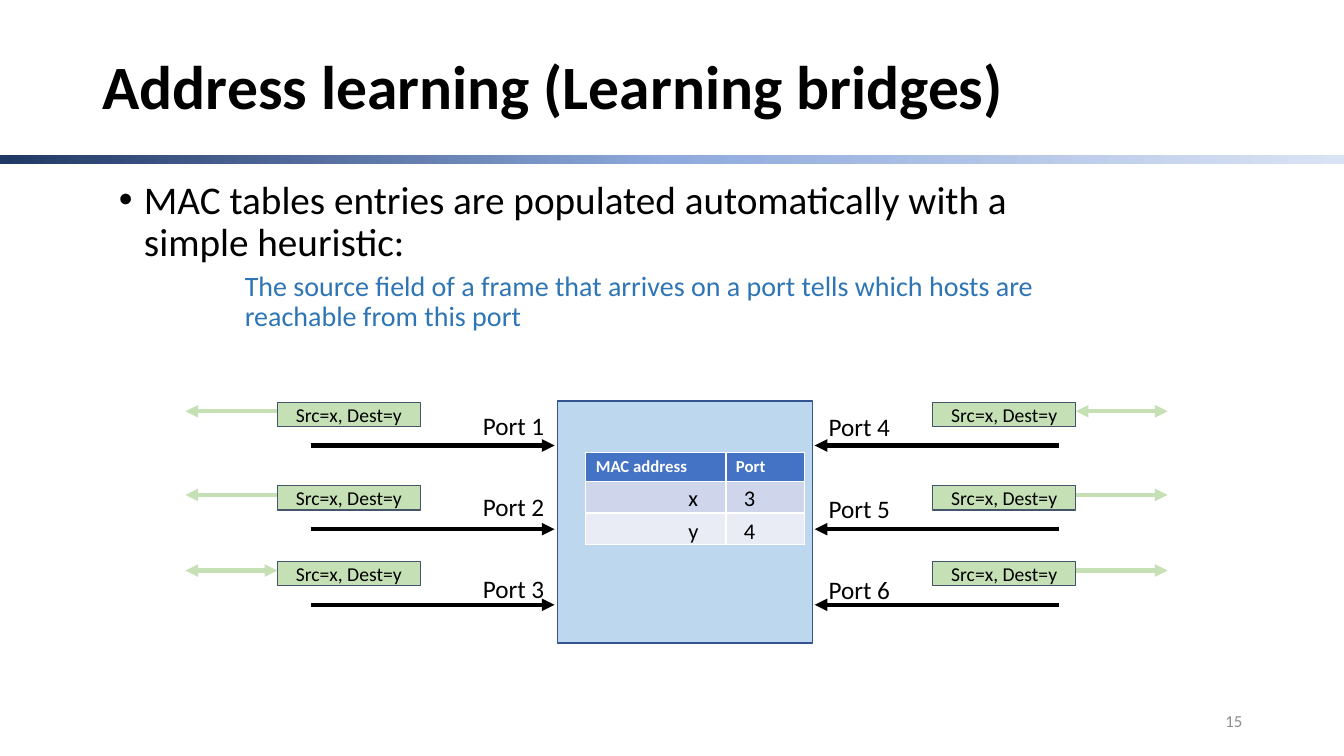
from dataclasses import dataclass
from copy import deepcopy
from typing import Any

from pptx import Presentation
from pptx.dml.color import RGBColor
from pptx.enum.shapes import MSO_CONNECTOR as Connector, MSO_SHAPE as Shape
from pptx.enum.text import MSO_ANCHOR as Anchor, PP_ALIGN as Align
from pptx.oxml.ns import qn
from pptx.oxml.xmlchemy import OxmlElement as Element
from pptx.util import Emu, Pt

EMU_PER_PX = 9144
BLACK, WHITE, GREEN = "000000", "FFFFFF", "C5E0B4"
ROWS = (442, 525, 600)
ROW_FILLS = ("4472C4", "CFD5EA", "E9EBF5")
HEADINGS = ("MAC address", "Port")
ENTRIES = (("x", "3"), ("y", "4"))


@dataclass(frozen=True)
class Style:
    """Look of one paragraph."""
    size: int
    color: str = BLACK
    bold: bool = False
    align: Any = Align.LEFT


@dataclass(frozen=True)
class Side:
    """Horizontal layout of the ports on one side of the bridge."""
    link_start: int
    link_end: int
    frame_left: int
    arrow_start: int
    arrow_end: int
    name_left: int
    name_top: int
    first_port: int
    flooded_row: int


SIDES = (
    Side(308, 550, 275, 275, 184, 469, 402, 1, 2),
    Side(1050, 808, 925, 1067, 1158, 812, 403, 4, 0),
)


def px(length: int) -> Emu:
    """Turn px into EMU."""
    return Emu(length * EMU_PER_PX)


def rgb(color: str) -> RGBColor:
    """Turn a hex string into a colour."""
    return RGBColor.from_string(color)


def assign(target: Any, values: dict[str, Any]) -> None:
    """Set attributes from a dict of format values."""
    for name, value in values.items():
        setattr(target, name, value)


def write(para: Any, text: str, style: Style) -> None:
    """Put one styled span into a paragraph."""
    para.alignment = style.align
    span = para.add_run()
    span.text = text
    assign(span.font, {"name": "Calibri", "size": Pt(style.size), "bold": style.bold})
    span.font.color.rgb = rgb(style.color)


def add_text(page: Any, area: tuple[int, ...], text: str, style: Style,
             anchor: Any = Anchor.TOP) -> Any:
    """Add a wrapped text box and return its frame."""
    frame = page.shapes.add_textbox(*map(px, area)).text_frame
    assign(frame, {"word_wrap": True, "vertical_anchor": anchor})
    write(frame.paragraphs[0], text, style)
    return frame


def indent(para: Any, margin: int, hanging: int, bullet: str = "") -> None:
    """Indent a paragraph and give it an optional bullet."""
    props = para._p.get_or_add_pPr()
    props.set("marL", str(px(margin)))
    props.set("indent", str(px(-hanging)))
    if bullet:
        font, mark = Element("a:buFont"), Element("a:buChar")
        font.set("typeface", "Arial")
        mark.set("char", bullet)
        props.extend((font, mark))


def add_tab_stop(para: Any, position: int) -> None:
    """Give a paragraph one left tab stop."""
    stops, stop = Element("a:tabLst"), Element("a:tab")
    stop.set("pos", str(px(position)))
    stop.set("algn", "l")
    stops.append(stop)
    para._p.get_or_add_pPr().append(stops)


def add_box(page: Any, area: tuple[int, ...], fill: str, line: str, width: float) -> Any:
    """Add an outlined rectangle."""
    box = page.shapes.add_shape(Shape.RECTANGLE, *map(px, area))
    box.shadow.inherit = False
    box.fill.solid()
    box.fill.fore_color.rgb = rgb(fill)
    box.line.color.rgb = rgb(line)
    box.line.width = Pt(width)
    return box


def add_arrow(page: Any, start: int, end: int, y: int, color: str,
              both_ends: bool = False) -> None:
    """Add a horizontal arrow."""
    arrow = page.shapes.add_connector(Connector.STRAIGHT, *map(px, (start, y, end, y)))
    arrow.line.color.rgb = rgb(color)
    arrow.line.width = Pt(3)
    for tag in ("a:headEnd", "a:tailEnd") if both_ends else ("a:tailEnd",):
        tip = Element(tag)
        tip.set("type", "triangle")
        arrow.line._get_or_add_ln().append(tip)
    arrow.element.spPr.append(Element("a:effectLst"))


def add_title_bar(page: Any) -> None:
    """Add the gradient bar below the title."""
    bar = page.shapes.add_shape(Shape.RECTANGLE, *map(px, (0, 154, 1333, 9)))
    bar.shadow.inherit = False
    bar.line.fill.background()
    bar.fill.gradient()
    bar.fill.gradient_angle = 0
    stops = bar.element.spPr.find(qn("a:gradFill")).find(qn("a:gsLst"))
    stops.insert(1, deepcopy(stops[0]))
    for stop, position, color in zip(bar.fill.gradient_stops, (0, 0.5, 1),
                                     ("203864", "8FAADC", "DAE3F3")):
        stop.position = position
        stop.color.rgb = rgb(color)


def add_heuristic(page: Any) -> None:
    """Add the bullet and the rule under it."""
    frame = add_text(page, (108, 174, 933, 336),
                     "MAC tables entries are populated automatically with a simple heuristic:",
                     Style(28))
    rule = frame.add_paragraph()
    write(rule, "The source field of a frame that arrives on a port tells which hosts are "
                "reachable from this port", Style(20, "2E75B6"))
    rule.space_before = Pt(5)
    for para in frame.paragraphs:
        para.line_spacing = 0.9
    indent(frame.paragraphs[0], 25, 25, "•")
    indent(rule, 125, 0)


def add_port(page: Any, side: Side, row: int) -> None:
    """Add one port with its link, name, frame and flooding arrow."""
    y = ROWS[row]
    add_arrow(page, side.link_start, side.link_end, y, BLACK)
    add_text(page, (side.name_left, side.name_top + 81 * row, 117, 40),
             f"Port {side.first_port + row}", Style(18))
    label = add_box(page, (side.frame_left, y - 43, 142, 24), GREEN, "44546A", 0.75)
    margins = dict.fromkeys(("margin_left", "margin_top", "margin_right", "margin_bottom"), 0)
    assign(label.text_frame, margins | {"vertical_anchor": Anchor.MIDDLE, "word_wrap": True})
    write(label.text_frame.paragraphs[0], "Src=x, Dest=y", Style(14, align=Align.CENTER))
    add_arrow(page, side.arrow_start, side.arrow_end, y - 34, GREEN, row == side.flooded_row)


def add_mac_table(page: Any) -> None:
    """Add the address table and the learned entries over its rows."""
    table = page.shapes.add_table(3, 2, *map(px, (581, 449, 217, 91))).table
    for column, width, heading in zip(table.columns, (139, 78), HEADINGS):
        column.width = px(width)
    for j, heading in enumerate(HEADINGS):
        write(table.cell(0, j).text_frame.paragraphs[0], heading, Style(12, WHITE, True))
    for row, height, fill in zip(table.rows, (29, 31, 31), ROW_FILLS):
        row.height = px(height)
        for cell in row.cells:
            assign(cell, {"margin_top": 0, "margin_bottom": 0,
                          "vertical_anchor": Anchor.MIDDLE})
            cell.fill.solid()
            cell.fill.fore_color.rgb = rgb(fill)
    for i, entry in enumerate(ENTRIES):
        frame = add_text(page, (673, 475 + 33 * i, 120, 37), "\t".join(entry), Style(16))
        add_tab_stop(frame.paragraphs[0], 55)


def main() -> None:
    """Build the deck."""
    deck = Presentation()
    assign(deck, {"slide_width": px(1333), "slide_height": px(750)})
    page = deck.slides.add_slide(deck.slide_layouts[6])
    add_title_bar(page)
    title = add_text(page, (92, 40, 1150, 97), "Address learning (Learning bridges)",
                     Style(44, bold=True), Anchor.MIDDLE)
    title.paragraphs[0].line_spacing = 0.9
    add_heuristic(page)
    for side in SIDES:
        for row in range(len(ROWS)):
            add_port(page, side, row)
    add_box(page, (553, 398, 253, 240), "BDD7EE", "325491", 1)
    add_mac_table(page)
    add_text(page, (942, 695, 300, 40), "15", Style(12, "8C8C8C", align=Align.RIGHT),
             Anchor.MIDDLE)
    deck.save("out.pptx")


if __name__ == "__main__":
    main()
